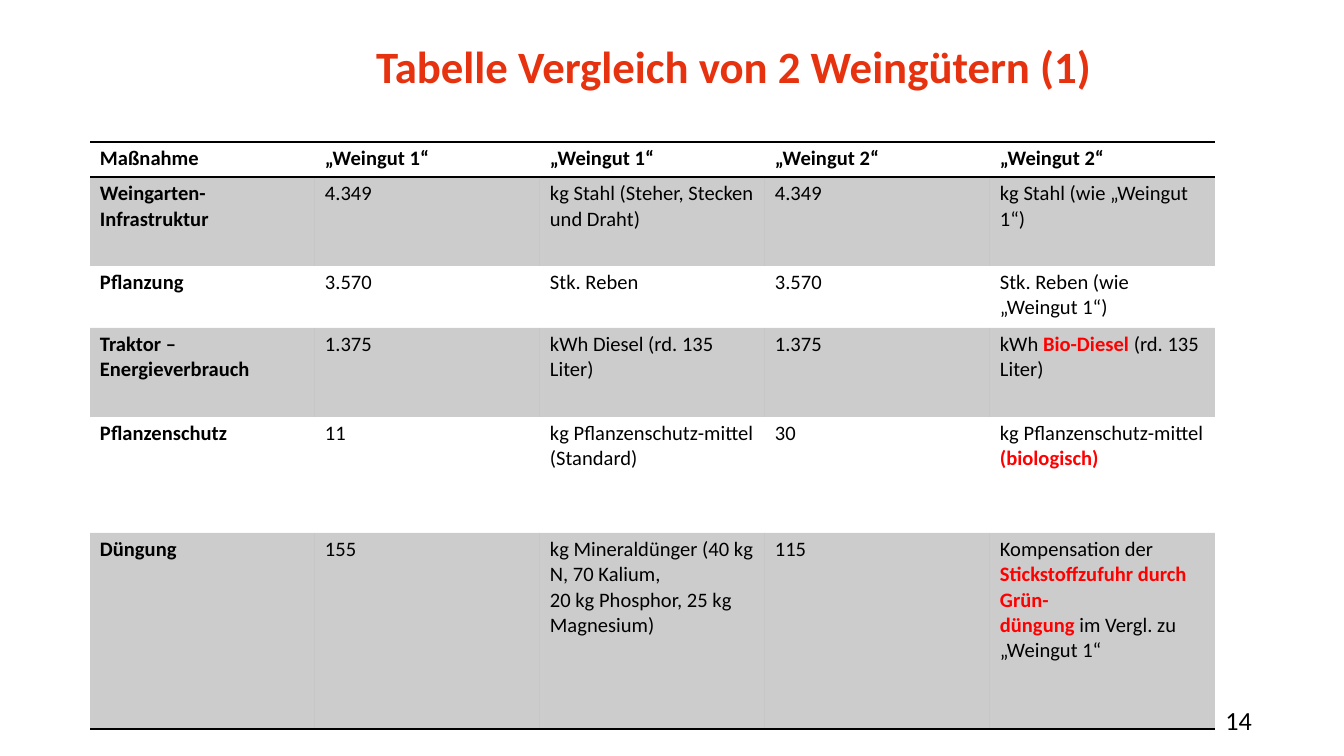
from dataclasses import dataclass

from lxml import etree
from pptx import Presentation
from pptx import util as u
from pptx.dml import color
from pptx.enum import text as t
from pptx.oxml import ns

SCALE = 914400 / 134.4
BLACK, RED, TITLE = "000000", "FF0000", "E6320F"
PLAIN = "{2D5ABB26-0587-4C30-8999-92F81FD0307C}"


@dataclass
class Row:
    high: int
    cells: list[str]
    head: bool = False
    shade: bool = False
    edges: str = ""


ROWS = [
    Row(35, ["Maßnahme", "„Weingut 1“", "„Weingut 1“", "„Weingut 2“", "„Weingut 2“"],
        head=True, edges="TB"),
    Row(89, ["Weingarten-Infrastruktur", "4.349", "kg Stahl (Steher, Stecken und Draht)",
             "4.349", "kg Stahl (wie „Weingut 1“)"], shade=True),
    Row(62, ["Pflanzung", "3.570", "Stk. Reben", "3.570", "Stk. Reben (wie „Weingut 1“)"]),
    Row(89, ["Traktor – Energieverbrauch", "1.375", "kWh Diesel (rd. 135 Liter)",
             "1.375", "kWh *Bio-Diesel *(rd. 135 Liter)"], shade=True),
    Row(116, ["Pflanzenschutz", "11", "kg Pflanzenschutz-mittel (Standard)",
              "30", "kg Pflanzenschutz-mittel *(biologisch)*"]),
    Row(196, ["Düngung", "155",
              "kg Mineraldünger (40 kg N, 70 Kalium,\n20 kg Phosphor, 25 kg Magnesium)",
              "115",
              "Kompensation der *Stickstoffzufuhr durch Grün-*\n"
              "*düngung *im Vergl. zu „Weingut 1“"], shade=True, edges="B"),
]


def px(n: int) -> int:
    return round(n * SCALE)


def rgb(code: str) -> color.RGBColor:
    return color.RGBColor.from_string(code)


def write(frame, words: str, size=11, tint=BLACK, bold=False,
          align=t.PP_ALIGN.LEFT, lead=None) -> None:
    for i, line in enumerate(words.split("\n")):
        para = frame.add_paragraph() if i else frame.paragraphs[0]
        para.alignment = align
        if lead:
            para.line_spacing = u.Pt(lead)
        for j, part in enumerate(line.split("*")):
            if not part:
                continue
            mark = j % 2 == 1
            run = para.add_run()
            run.text = part
            font = run.font
            font.name, font.size, font.bold = "Calibri", u.Pt(size), bold or mark
            font.color.rgb = rgb(RED if mark else tint)


def setup(frame, anchor) -> None:
    frame.margin_left = frame.margin_right = frame.margin_top = frame.margin_bottom = 0
    frame.auto_size = t.MSO_AUTO_SIZE.NONE
    frame.word_wrap = True
    frame.vertical_anchor = anchor


def place(shape, x: int, y: int, w: int, h: int) -> None:
    shape.left, shape.top, shape.width, shape.height = map(px, (x, y, w, h))


def border(cell, sides: str) -> None:
    props = cell._tc.get_or_add_tcPr()
    for side in sides:
        line = etree.SubElement(props, ns.qn(f"a:ln{side}"), w=str(u.Pt(1)))
        fill = etree.SubElement(line, ns.qn("a:solidFill"))
        etree.SubElement(fill, ns.qn("a:srgbClr"), val=BLACK)


def paint(cell, shade: bool) -> None:
    if not shade:
        cell.fill.background()
        return
    cell.fill.solid()
    cell.fill.fore_color.rgb = rgb(BLACK)
    tone = cell._tc.tcPr.find(ns.qn("a:solidFill"))[0]
    etree.SubElement(tone, ns.qn("a:alpha"), val="20000")


def grid(slide, rows: list[Row], x: int, y: int, wide: int) -> None:
    cols = len(rows[0].cells)
    high = sum(row.high for row in rows)
    table = slide.shapes.add_table(len(rows), cols, px(x), px(y), px(wide * cols), px(high)).table
    table.first_row = table.horz_banding = False
    table._tbl.tblPr.find(ns.qn("a:tableStyleId")).text = PLAIN
    for col in table.columns:
        col.width = px(wide)
    for r, row in enumerate(rows):
        table.rows[r].height = px(row.high)
        for c, words in enumerate(row.cells):
            cell = table.cell(r, c)
            cell.margin_left = cell.margin_right = px(10)
            cell.margin_top = cell.margin_bottom = px(4)
            border(cell, row.edges)
            paint(cell, row.shade)
            write(cell.text_frame, words, bold=row.head or c == 0)


def main() -> None:
    deck = Presentation()
    deck.slide_width, deck.slide_height = px(1344), px(756)
    slide = deck.slides.add_slide(deck.slide_layouts[5])
    title = slide.shapes.title
    place(title, 376, 36, 731, 59)
    setup(title.text_frame, t.MSO_ANCHOR.TOP)
    write(title.text_frame, "Tabelle Vergleich von 2 Weingütern (1)",
          size=24, tint=TITLE, bold=True, lead=30)
    grid(slide, ROWS, 90, 142, 225)
    page = slide.shapes.add_textbox(0, 0, 0, 0)
    place(page, 1111, 705, 141, 30)
    setup(page.text_frame, t.MSO_ANCHOR.MIDDLE)
    write(page.text_frame, "14", size=14, align=t.PP_ALIGN.RIGHT)
    deck.save("out.pptx")


if __name__ == "__main__":
    main()
